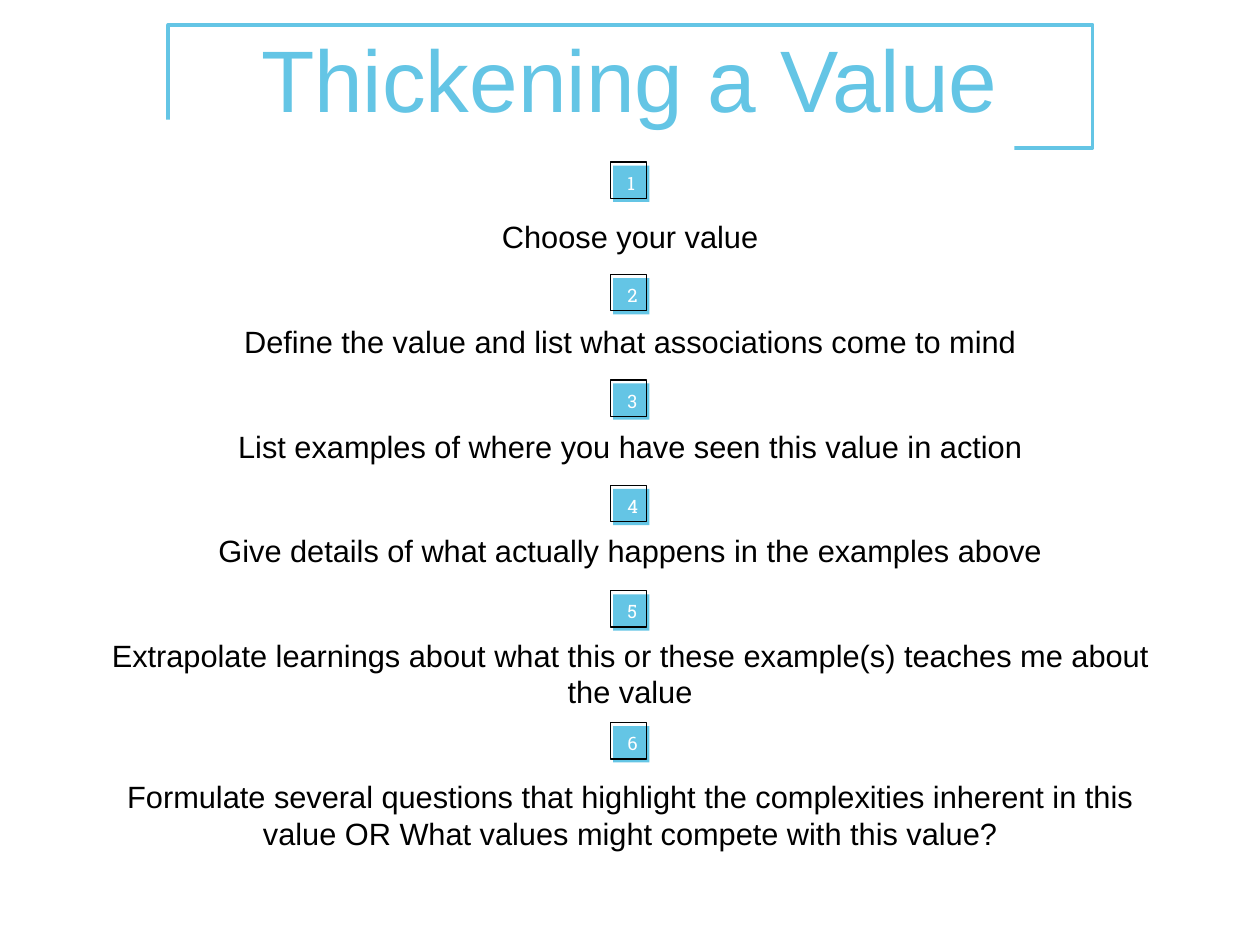
import pptx
import pptx.util
import pptx.dml.color
import pptx.enum.shapes
import pptx.enum.text

Inches = pptx.util.Inches
Pt = pptx.util.Pt
ALIGN = pptx.enum.text.PP_ALIGN
ANCHOR = pptx.enum.text.MSO_ANCHOR
AUTO_SIZE = pptx.enum.text.MSO_AUTO_SIZE

COLORS = {"accent": "64C5E5", "ink": "000000", "paper": "FFFFFF"}

STEPS = [
    ("Choose your value", 1.83),
    ("Define the value and list what associations come to mind", 3.1),
    ("List examples of where you have seen this value in action", 4.29),
    ("Give details of what actually happens in the examples above", 5.48),
    ("Extrapolate learnings about what this or these example(s) teaches me about the value", 6.67),
    ("Formulate several questions that highlight the complexities inherent in this value "
     "OR What values might compete with this value?", 8.16),
]
BADGE_LEFT = 6.89
BADGE_SIDE = 0.41
BADGE_OFFSET = 0.03


def color(name):
    return pptx.dml.color.RGBColor.from_string(COLORS[name])


def set_format(target, values):
    for attribute, value in values.items():
        setattr(target, attribute, value)


def add_box(shapes, left, top, width, height, fill=None, line=None, weight=1):
    box = shapes.add_shape(pptx.enum.shapes.MSO_SHAPE.RECTANGLE,
                           Inches(left), Inches(top), Inches(width), Inches(height))
    box.shadow.inherit = False
    if fill:
        box.fill.solid()
        box.fill.fore_color.rgb = color(fill)
    else:
        box.fill.background()
    if line:
        box.line.color.rgb = color(line)
        box.line.width = Pt(weight)
    else:
        box.line.fill.background()


def add_text(shapes, left, top, width, height, lines, font, ink, paragraph_format, frame_format):
    frame = shapes.add_textbox(Inches(left), Inches(top), Inches(width), Inches(height)).text_frame
    margins = dict.fromkeys(("margin_left", "margin_top", "margin_right", "margin_bottom"),
                            Inches(0.06))
    set_format(frame, {"word_wrap": True, **margins, **frame_format})
    frame.text = "\n".join(lines)
    for paragraph in frame.paragraphs:
        set_format(paragraph, paragraph_format)
        for run in paragraph.runs:
            set_format(run.font, font)
            run.font.color.rgb = color(ink)


def add_badge(shapes, number, top):
    add_box(shapes, BADGE_LEFT + BADGE_OFFSET, top + BADGE_OFFSET + 0.01,
            BADGE_SIDE, BADGE_SIDE, fill="accent")
    add_box(shapes, BADGE_LEFT, top, BADGE_SIDE, BADGE_SIDE, line="ink")
    add_text(shapes, BADGE_LEFT + 0.13, top + 0.05, 0.22, 0.38, [str(number)],
             {"name": "Roboto Slab", "size": Pt(15)}, "paper",
             {"alignment": ALIGN.LEFT}, {"vertical_anchor": ANCHOR.TOP})


def add_steps(shapes):
    add_text(shapes, 1.17, 2.41, 11.88, 7.26, [step for step, top in STEPS],
             {"name": "Arial", "size": Pt(25)}, "ink",
             {"alignment": ALIGN.CENTER, "space_before": Pt(55)},
             {"vertical_anchor": ANCHOR.MIDDLE, "auto_size": AUTO_SIZE.SHAPE_TO_FIT_TEXT})
    for number, (step, top) in enumerate(STEPS, 1):
        add_badge(shapes, number, top)


def add_title_frame(shapes):
    add_box(shapes, 1.9, 0.28, 10.43, 1.39, line="accent", weight=3)
    add_box(shapes, 0.98, 1.35, 10.47, 1.39, fill="paper")


def add_title(shapes):
    add_text(shapes, 2.55, 0.11, 9.11, 1.54, ["Thickening a Value"],
             {"name": "Arial", "size": Pt(71)}, "accent",
             {"alignment": ALIGN.CENTER}, {"vertical_anchor": ANCHOR.MIDDLE})


def main():
    deck = pptx.Presentation()
    set_format(deck, {"slide_width": Inches(14.22), "slide_height": Inches(10.67)})
    slide = deck.slides.add_slide(deck.slide_layouts[6])
    add_title_frame(slide.shapes)
    add_steps(slide.shapes.add_group_shape().shapes)
    add_title(slide.shapes)
    deck.save("out.pptx")


if __name__ == "__main__":
    main()
